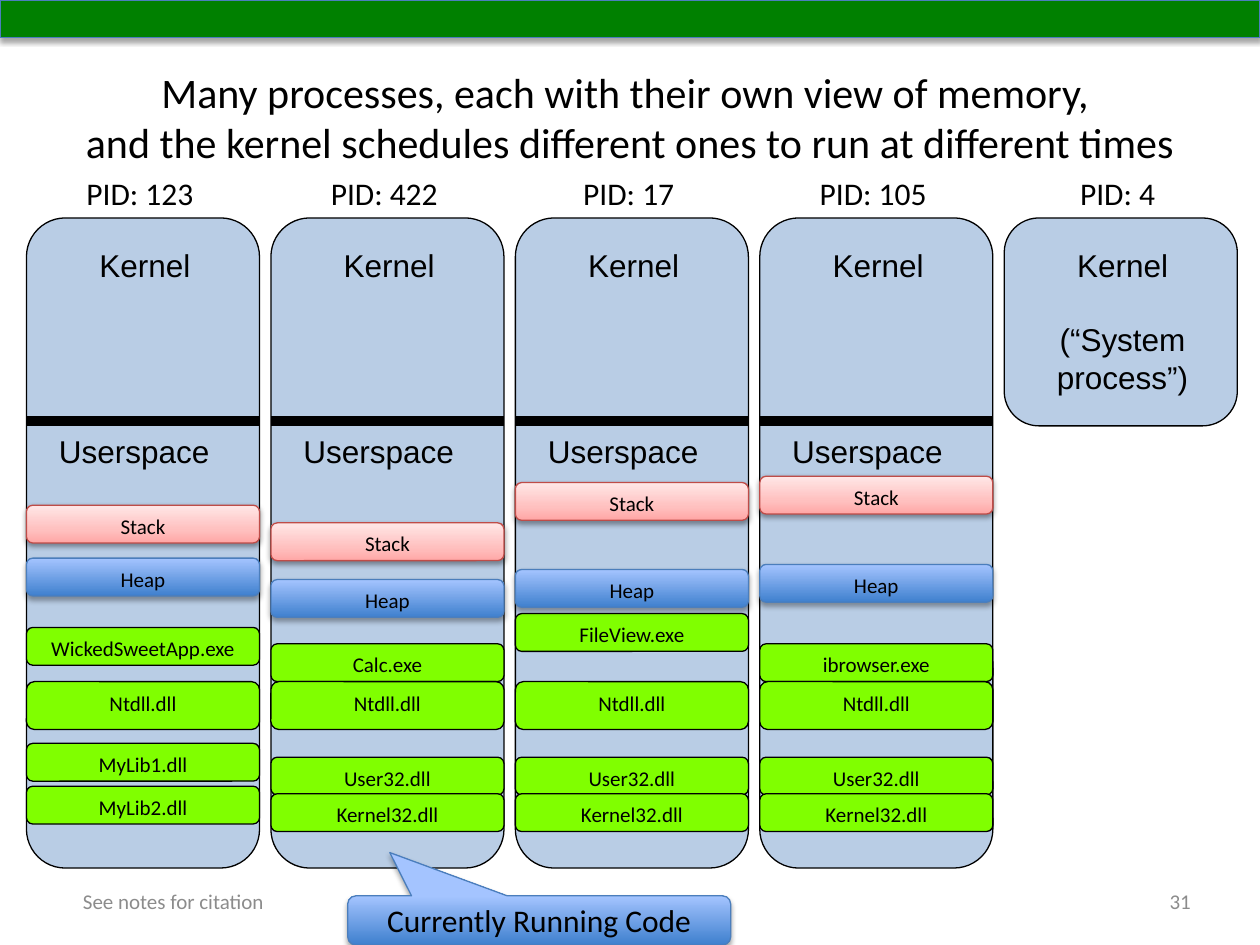
from lxml.etree import SubElement
from pptx import Presentation
from pptx.dml.color import RGBColor
from pptx.enum.shapes import MSO_CONNECTOR, MSO_SHAPE
from pptx.enum.text import MSO_ANCHOR, PP_ALIGN
from pptx.oxml.ns import qn
from pptx.util import Inches, Pt

BLACK = RGBColor(0x00, 0x00, 0x00)
GRAY = RGBColor(0x8C, 0x8C, 0x8C)
GREEN = RGBColor(0x00, 0x80, 0x00)
LIME = RGBColor(0x80, 0xFF, 0x00)
PALE_BLUE = RGBColor(0xB9, 0xCD, 0xE5)
BLUE_LINE = RGBColor(0x4B, 0x7E, 0xBC)
RED_LINE = RGBColor(0xBF, 0x4C, 0x48)

# Gradient stops run from bottom to top: (percent, colour)
BLUE_STOPS = [(0, RGBColor(0x3F, 0x80, 0xCE)), (100, RGBColor(0xA4, 0xC4, 0xFF))]
RED_STOPS = [(0, RGBColor(0xFF, 0xA6, 0xA5)), (35, RGBColor(0xFF, 0xC0, 0xBF)),
             (100, RGBColor(0xFF, 0xE7, 0xE7))]

# Region style: (fill or gradient stops, line colour, shadow as (opacity %, distance pt))
BLUE_SHADOW = (35, 1.8)
CODE = (LIME, BLACK, None)
STACK = (RED_STOPS, RED_LINE, (38, 1.6))
HEAP = (BLUE_STOPS, BLUE_LINE, BLUE_SHADOW)

TITLE = ["Many processes, each with their own view of memory, ",
         "and the kernel schedules different ones to run at different times"]
SHARED_LIBRARIES = [("User32.dll", 6.01, CODE), ("Kernel32.dll", 6.3, CODE)]
# Process: (PID label, regions as (name, top, style))
PROCESSES = [
    ("PID: 123", [("WickedSweetApp.exe", 4.98, CODE), ("MyLib1.dll", 5.9, CODE),
                  ("MyLib2.dll", 6.24, CODE), ("Stack", 4.01, STACK), ("Heap", 4.43, HEAP)]),
    ("PID: 422", [("Calc.exe", 5.11, CODE), *SHARED_LIBRARIES,
                  ("Stack", 4.15, STACK), ("Heap", 4.6, HEAP)]),
    ("PID: 17", [("FileView.exe", 4.87, CODE), *SHARED_LIBRARIES,
                 ("Stack", 3.83, STACK), ("Heap", 4.52, HEAP)]),
    ("PID: 105", [("ibrowser.exe", 5.11, CODE), *SHARED_LIBRARIES,
                  ("Stack", 3.78, STACK), ("Heap", 4.48, HEAP)]),
]
SYSTEM_PID = "PID: 4"
SYSTEM_TEXT = ["Kernel", "(“System process”)"]

SLIDE_WIDTH, SLIDE_HEIGHT = 10, 7.5
COLUMN_LEFT, COLUMN_PITCH, COLUMN_WIDTH = 0.21, 1.94, 1.85
COLUMN_TOP, COLUMN_HEIGHT, KERNEL_HEIGHT = 1.73, 5.16, 1.65
DIVIDER_TOP = 3.34
REGION_HEIGHT = 0.3
LABEL_INDENT = 0.31


def box(left, top, width, height):
    return [Inches(length) for length in (left, top, width, height)]


def write(shape, lines, size, font="Calibri", color=BLACK, align=PP_ALIGN.CENTER,
          anchor=MSO_ANCHOR.TOP, gap=0):
    """Write one paragraph per line; a line given as a list holds line breaks."""
    frame = shape.text_frame
    frame.word_wrap = True
    frame.vertical_anchor = anchor
    for index, line in enumerate(lines):
        paragraph = frame.add_paragraph() if index else frame.paragraphs[0]
        paragraph.alignment = align
        if index:
            paragraph.space_before = Pt(gap)
        for part_index, part in enumerate(line if isinstance(line, list) else [line]):
            if part_index:
                paragraph.add_line_break()
            run = paragraph.add_run()
            run.text = part
            run.font.size = Pt(size)
            run.font.name = font
            run.font.color.rgb = color


def add_label(shapes, bounds, lines, size, **style):
    write(shapes.add_textbox(*box(*bounds)), lines, size, **style)


def set_gradient(shape, stops):
    shape.fill.gradient()
    shape.fill.gradient_angle = 90
    stop_list = shape.element.spPr.find(".//" + qn("a:gsLst"))
    stop_list.clear()
    for percent, color in stops:
        stop = SubElement(stop_list, qn("a:gs"), pos=str(percent * 1000))
        SubElement(stop, qn("a:srgbClr"), val=str(color))


def set_shadow(shape, opacity, distance):
    effects = shape.element.spPr.find(qn("a:effectLst"))
    shadow = SubElement(effects, qn("a:outerShdw"), blurRad=str(Pt(3.1)),
                        dist=str(Pt(distance)), dir="5400000", rotWithShape="0")
    color = SubElement(shadow, qn("a:srgbClr"), val=str(BLACK))
    SubElement(color, qn("a:alpha"), val=str(opacity * 1000))


def add_block(shapes, kind, bounds, fill, line, shadow=None):
    shape = shapes.add_shape(kind, *box(*bounds))
    if isinstance(fill, list):
        set_gradient(shape, fill)
    else:
        shape.fill.solid()
        shape.fill.fore_color.rgb = fill
    shape.line.color.rgb = line
    shape.line.width = Pt(0.75)
    shape.shadow.inherit = False
    if shadow:
        set_shadow(shape, *shadow)
    return shape


def add_column(shapes, left, height, pid, kernel_lines, kernel_text_height):
    """Draw the memory outline with its kernel text and the PID above it."""
    add_block(shapes, MSO_SHAPE.ROUNDED_RECTANGLE,
              (left, COLUMN_TOP, COLUMN_WIDTH, height), PALE_BLUE, BLACK)
    add_label(shapes, (left + LABEL_INDENT, 1.9, 1.26, kernel_text_height),
              kernel_lines, 18, font="Arial", gap=21)
    add_label(shapes, (left + LABEL_INDENT, 1.33, 1.18, 0.4), [pid], 18)


def add_process(shapes, left, pid, regions):
    add_column(shapes, left, COLUMN_HEIGHT, pid, ["Kernel"], 0.4)
    divider = shapes.add_connector(
        MSO_CONNECTOR.STRAIGHT, Inches(left), Inches(DIVIDER_TOP),
        Inches(left + COLUMN_WIDTH), Inches(DIVIDER_TOP))
    divider.line.color.rgb = BLACK
    divider.line.width = Pt(6)
    SubElement(divider.element.spPr, qn("a:effectLst"))
    add_label(shapes, (left, 3.38, 1.71, 0.4), ["Userspace"], 18, font="Arial")
    for name, top, style in [*regions, ("Ntdll.dll", 5.41, CODE)]:
        height = 0.38 if name == "Ntdll.dll" else REGION_HEIGHT
        region = add_block(shapes, MSO_SHAPE.ROUNDED_RECTANGLE,
                           (left, top, COLUMN_WIDTH, height), *style)
        write(region, [name], 12)


def main():
    presentation = Presentation()
    presentation.slide_width = Inches(SLIDE_WIDTH)
    presentation.slide_height = Inches(SLIDE_HEIGHT)
    slide = presentation.slides.add_slide(presentation.slide_layouts[6])
    shapes = slide.shapes

    add_label(shapes, (0.5, 0.3, 9, 1.25), [TITLE], 24, anchor=MSO_ANCHOR.MIDDLE)
    for left, text, align in [(0.56, "See notes for citation", PP_ALIGN.LEFT),
                              (7.22, "31", PP_ALIGN.RIGHT)]:
        add_label(shapes, (left, 6.95, 2.33, 0.4), [text], 12, color=GRAY,
                  align=align, anchor=MSO_ANCHOR.MIDDLE)
    add_block(shapes, MSO_SHAPE.RECTANGLE, (0, 0, SLIDE_WIDTH, 0.3),
              GREEN, BLUE_LINE, BLUE_SHADOW)

    for column, (pid, regions) in enumerate(PROCESSES):
        group = shapes.add_group_shape()
        add_process(group.shapes, COLUMN_LEFT + column * COLUMN_PITCH, pid, regions)
    add_column(shapes, COLUMN_LEFT + len(PROCESSES) * COLUMN_PITCH, KERNEL_HEIGHT,
               SYSTEM_PID, SYSTEM_TEXT, 1.31)

    callout = add_block(shapes, MSO_SHAPE.ROUNDED_RECTANGULAR_CALLOUT,
                        (2.76, 7.11, 3.04, 0.39), *HEAP)
    callout.adjustments[0] = -0.39
    callout.adjustments[1] = -1.38
    write(callout, ["Currently Running Code"], 18, anchor=MSO_ANCHOR.MIDDLE)

    presentation.save("out.pptx")


if __name__ == "__main__":
    main()
